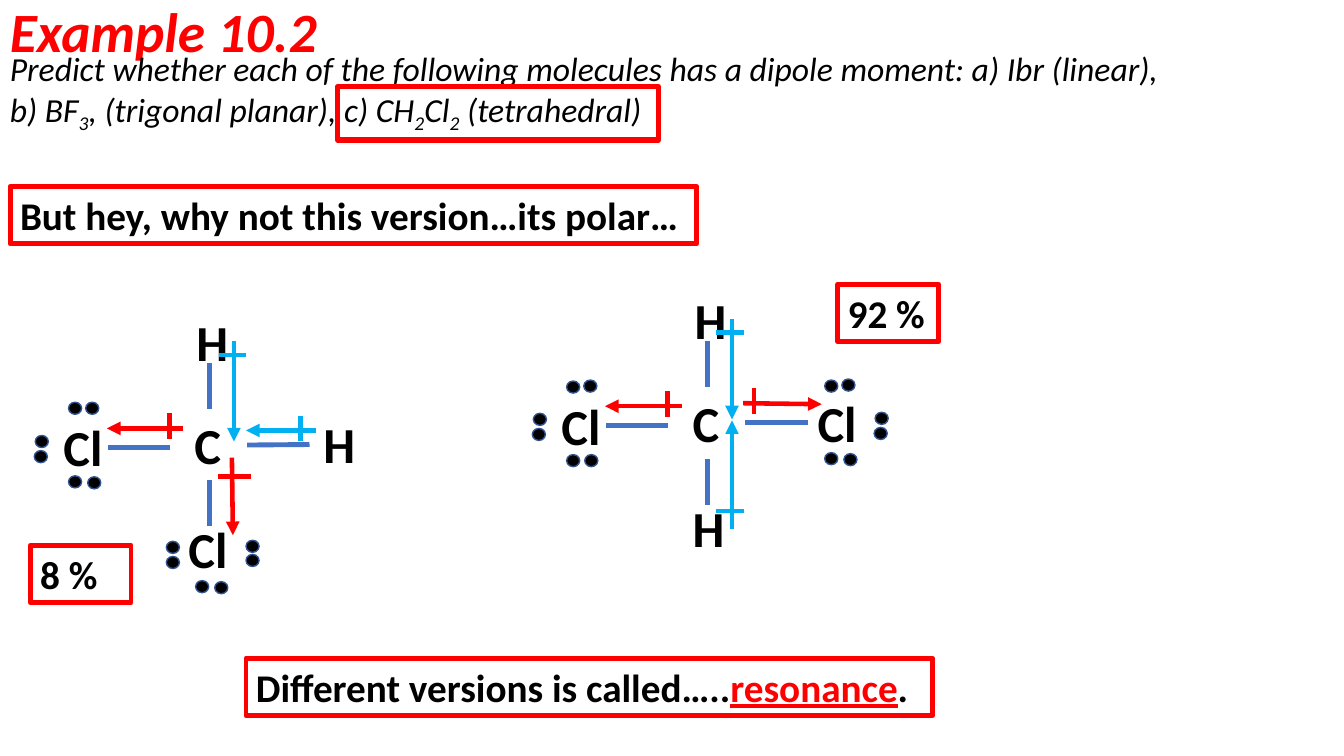
"""Build the slide on the polarity of two drawings of CH2Cl2."""
from dataclasses import dataclass

from lxml import etree
from pptx import Presentation
from pptx import util as u
from pptx.dml.color import RGBColor
from pptx.enum import shapes, text
from pptx.oxml.ns import qn

EMU_PER_PX = 9144
FONT = "Calibri"
BLACK = RGBColor(0x00, 0x00, 0x00)
RED = RGBColor(0xFF, 0x00, 0x00)
CYAN = RGBColor(0x00, 0xB0, 0xF0)
BLUE = RGBColor(0x44, 0x72, 0xC4)
DOT_LINE = RGBColor(0x32, 0x54, 0x91)
ATOM_WIDTH, ATOM_HEIGHT = 62, 71
DOT_WIDTH, DOT_HEIGHT = 13, 12
BOX_HEIGHT = 57
RIGHT_SIDE, LEFT_SIDE = 3, 1
SUBSCRIPT = "-25000"


@dataclass(frozen=True)
class Run:
    text: str
    subscript: bool = False
    color: RGBColor = BLACK
    underline: bool = False


@dataclass(frozen=True)
class Atom:
    name: str
    symbol: str
    left: int
    top: int


@dataclass(frozen=True)
class Line:
    x1: int
    y1: int
    x2: int
    y2: int


@dataclass(frozen=True)
class Bond:
    line: Line
    start_atom: str = ""
    end_atom: str = ""


@dataclass(frozen=True)
class LonePair:
    left: int
    top: int
    step_x: int
    step_y: int


@dataclass(frozen=True)
class Dipole:
    arrow: Line
    cross: Line
    color: RGBColor


@dataclass(frozen=True)
class Molecule:
    atoms: list[Atom]
    bonds: list[Bond]
    lone_pairs: list[LonePair]
    dipoles: list[Dipole]


@dataclass(frozen=True)
class Box:
    left: int
    top: int
    width: int
    runs: list[Run]


BENT = Molecule(
    atoms=[Atom("center", "C", 183, 406), Atom("top", "H", 185, 304),
           Atom("right", "H", 311, 405), Atom("bottom", "Cl", 177, 509),
           Atom("left", "Cl", 53, 408)],
    bonds=[Bond(Line(245, 441, 307, 441), start_atom="center"),
           Bond(Line(107, 444, 169, 444)),
           Bond(Line(208, 406, 208, 360)),
           Bond(Line(208, 522, 208, 476))],
    lone_pairs=[LonePair(244, 536, 0, 14), LonePair(165, 537, 0, 15),
                LonePair(194, 576, 19, 1), LonePair(35, 432, -1, 15),
                LonePair(68, 399, 17, 0), LonePair(68, 472, 19, 1)],
    dipoles=[Dipole(Line(232, 338, 232, 438), Line(217, 352, 244, 352), CYAN),
             Dipole(Line(313, 427, 244, 427), Line(298, 413, 298, 438), CYAN),
             Dipole(Line(182, 425, 106, 425), Line(168, 410, 168, 436), RED),
             Dipole(Line(230, 454, 231, 531), Line(249, 473, 216, 473), RED)],
)
STRAIGHT = Molecule(
    atoms=[Atom("center", "C", 677, 384), Atom("top", "H", 679, 282),
           Atom("bottom", "H", 677, 488), Atom("right", "Cl", 801, 384),
           Atom("left", "Cl", 547, 387)],
    bonds=[Bond(Line(739, 419, 801, 419), start_atom="center", end_atom="right"),
           Bond(Line(601, 422, 663, 422)),
           Bond(Line(702, 384, 702, 338)),
           Bond(Line(702, 501, 702, 455))],
    lone_pairs=[LonePair(868, 409, -1, 15), LonePair(818, 377, 17, -1),
                LonePair(818, 449, 19, 1), LonePair(529, 410, -1, 15),
                LonePair(562, 378, 17, -1), LonePair(562, 451, 18, 0)],
    dipoles=[Dipole(Line(726, 316, 726, 416), Line(710, 330, 738, 330), CYAN),
             Dipole(Line(726, 525, 726, 417), Line(710, 507, 738, 507), CYAN),
             Dipole(Line(676, 403, 600, 403), Line(662, 388, 662, 414), RED),
             Dipole(Line(737, 400, 815, 401), Line(748, 385, 748, 411), RED)],
)
BOXES = [
    Box(10, 185, 681, [Run("But hey, why not this version…its polar…")]),
    Box(244, 653, 681, [Run("Different versions is called….."),
                        Run("resonance", color=RED, underline=True), Run(".")]),
    Box(831, 282, 100, [Run("92 %")]),
    Box(30, 541, 100, [Run("8 %")]),
]
QUESTION = [
    [Run("Predict whether each of the following molecules has a dipole moment: a) Ibr (linear),")],
    [Run("b) BF"), Run("3", subscript=True), Run(", (trigonal planar), c) CH"),
     Run("2", subscript=True), Run("Cl"), Run("2", subscript=True), Run(" (tetrahedral)")],
]


def px(length: int) -> u.Emu:
    """Turn px into EMU."""
    return u.Emu(length * EMU_PER_PX)


def add_text(slide, paragraphs: list[list[Run]], left: int, top: int, width: int, height: int, *,
             size: float, bold: bool = False, italic: bool = False,
             anchor=text.MSO_ANCHOR.TOP, line_spacing: float = 1.0):
    """Add a text box with one paragraph per list of runs."""
    shape = slide.shapes.add_textbox(px(left), px(top), px(width), px(height))
    frame = shape.text_frame
    frame.word_wrap = True
    frame.vertical_anchor = anchor
    for index, runs in enumerate(paragraphs):
        paragraph = frame.add_paragraph() if index else frame.paragraphs[0]
        paragraph.line_spacing = line_spacing
        for item in runs:
            run = paragraph.add_run()
            run.text = item.text
            font = run.font
            font.name, font.size = FONT, u.Pt(size)
            font.bold, font.italic = bold, italic
            font.color.rgb = item.color
            if item.underline:
                font.underline = True
            if item.subscript:
                run._r.get_or_add_rPr().set("baseline", SUBSCRIPT)
    return shape


def outline(shape, color: RGBColor, width: float) -> None:
    """Give a shape or connector a solid line."""
    shape.line.color.rgb = color
    shape.line.width = u.Pt(width)


def add_line(slide, line: Line, color: RGBColor, width: float, arrow: bool = False):
    """Add a straight connector, with an arrowhead at its end if asked."""
    connector = slide.shapes.add_connector(
        shapes.MSO_CONNECTOR.STRAIGHT, px(line.x1), px(line.y1), px(line.x2), px(line.y2))
    outline(connector, color, width)
    properties = connector._element.spPr
    if arrow:
        etree.SubElement(properties.find(qn("a:ln")), qn("a:tailEnd"), type="triangle")
    etree.SubElement(properties, qn("a:effectLst"))
    return connector


def add_lone_pair(slide, pair: LonePair) -> None:
    """Add the two electron dots of a lone pair."""
    for index in range(2):
        dot = slide.shapes.add_shape(
            shapes.MSO_SHAPE.OVAL, px(pair.left + index * pair.step_x),
            px(pair.top + index * pair.step_y), px(DOT_WIDTH), px(DOT_HEIGHT))
        dot.shadow.inherit = False
        dot.fill.solid()
        dot.fill.fore_color.rgb = BLACK
        outline(dot, DOT_LINE, 1)


def add_molecule(slide, molecule: Molecule) -> None:
    """Add the atoms, bonds, lone pairs and dipoles of a molecule."""
    atoms = {atom.name: add_text(slide, [[Run(atom.symbol)]], atom.left, atom.top,
                                 ATOM_WIDTH, ATOM_HEIGHT, size=36, bold=True)
             for atom in molecule.atoms}
    for bond in molecule.bonds:
        connector = add_line(slide, bond.line, BLUE, 3.5)
        if bond.start_atom:
            connector.begin_connect(atoms[bond.start_atom], RIGHT_SIDE)
        if bond.end_atom:
            connector.end_connect(atoms[bond.end_atom], LEFT_SIDE)
    for pair in molecule.lone_pairs:
        add_lone_pair(slide, pair)
    for dipole in molecule.dipoles:
        add_line(slide, dipole.arrow, dipole.color, 3.25, arrow=True)
        add_line(slide, dipole.cross, dipole.color, 3.25)


def main() -> None:
    """Build and save the slide."""
    presentation = Presentation()
    presentation.slide_width, presentation.slide_height = px(1333), px(750)
    slide = presentation.slides.add_slide(presentation.slide_layouts[6])
    add_text(slide, [[Run("Example 10.2", color=RED)]], 0, -1, 1150, 71, size=39.6,
             bold=True, italic=True, anchor=text.MSO_ANCHOR.MIDDLE, line_spacing=0.9)
    add_text(slide, QUESTION, 0, 43, 1333, 91, size=24, italic=True)
    highlight = slide.shapes.add_shape(
        shapes.MSO_SHAPE.RECTANGLE, px(335), px(86), px(318), px(53))
    highlight.shadow.inherit = False
    highlight.fill.background()
    outline(highlight, RED, 3.75)
    for molecule in (BENT, STRAIGHT):
        add_molecule(slide, molecule)
    for box in BOXES:
        shape = add_text(slide, [box.runs], box.left, box.top, box.width, BOX_HEIGHT,
                         size=28, bold=True)
        outline(shape, RED, 3.5)
    presentation.save("out.pptx")


if __name__ == "__main__":
    main()
